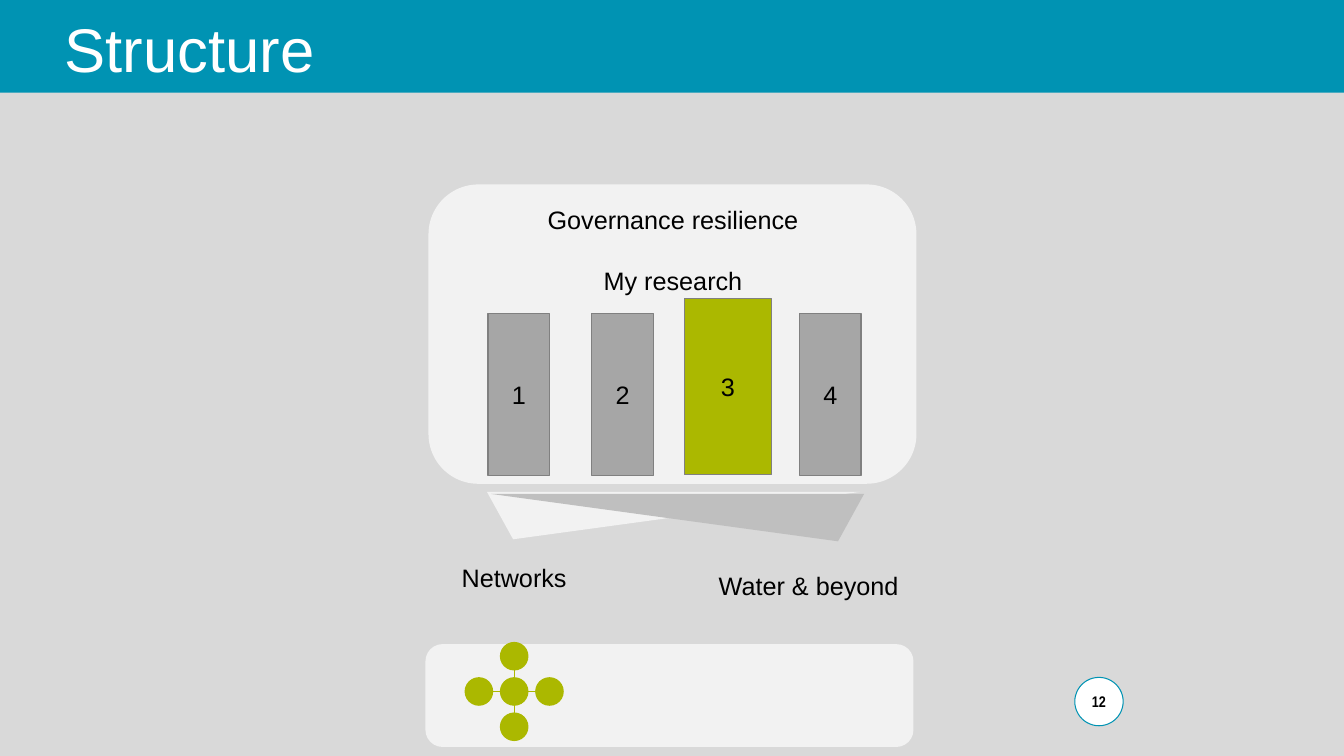
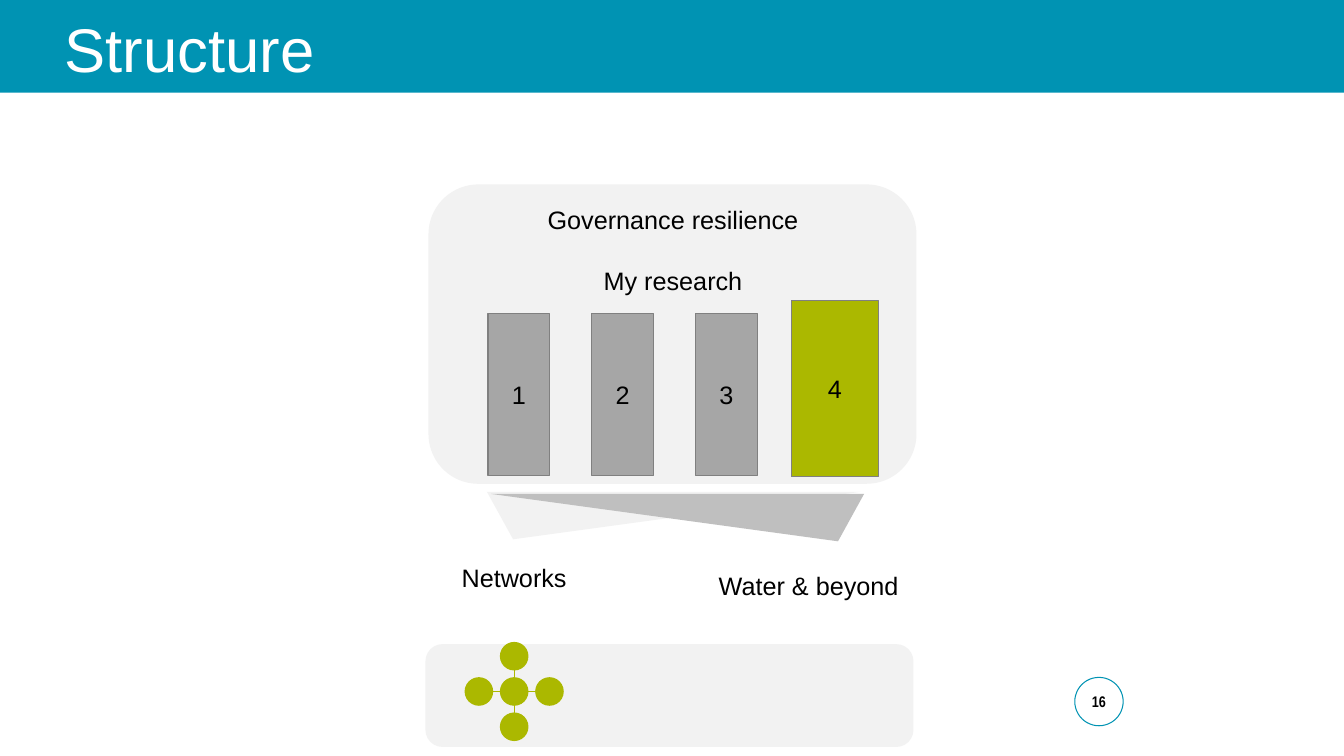
from dataclasses import dataclass

import pptx
import pptx.dml.color
import pptx.enum.shapes
import pptx.enum.text
import pptx.oxml
import pptx.oxml.ns
import pptx.shapes.autoshape
import pptx.shapes.connector
import pptx.slide
import pptx.util
from pptx.dml.color import RGBColor
from pptx.enum.shapes import MSO_CONNECTOR, MSO_SHAPE
from pptx.enum.text import MSO_ANCHOR, MSO_AUTO_SIZE, PP_ALIGN
from pptx.util import Inches, Pt

TEAL = RGBColor(0x00, 0x93, 0xB3)
LIME = RGBColor(0xAB, 0xB8, 0x00)
WHITE = RGBColor(0xFF, 0xFF, 0xFF)
BLACK = RGBColor(0x00, 0x00, 0x00)
PANEL_GREY = RGBColor(0xF2, 0xF2, 0xF2)
BACKDROP_GREY = RGBColor(0xD9, 0xD9, 0xD9)
BEAM_GREY = RGBColor(0xBF, 0xBF, 0xBF)
PILLAR_GREY = RGBColor(0xA6, 0xA6, 0xA6)
OUTLINE_GREY = RGBColor(0x80, 0x80, 0x80)

PILLAR_COUNT = 4
PILLAR_LEFT, PILLAR_TOP, PILLAR_PITCH = 4.84, 3.11, 1.03
PILLAR_SIZE = (0.61, 1.61)
ACTIVE_SIZE = (0.86, 1.75)
HUB = (5.1, 6.86)
NODE_SIZE, SPOKE = 0.27, 0.35


@dataclass(frozen=True)
class Box:
    left: float
    top: float
    width: float
    height: float

    def lengths(self) -> tuple[int, int, int, int]:
        return tuple(Inches(side) for side in (self.left, self.top, self.width, self.height))


@dataclass(frozen=True)
class Step:
    """One structure slide: the pillar in focus stands larger, in lime."""
    number: int
    background: RGBColor
    active: int
    active_left: float
    active_top: float


STEPS = [
    Step(12, BACKDROP_GREY, 3, 6.79, 2.96),
    Step(16, WHITE, 4, 7.85, 2.98),
]


def add_figure(
    slide: pptx.slide.Slide,
    kind: MSO_SHAPE,
    box: Box,
    fill: RGBColor,
    outline: RGBColor | None = None,
    outline_width: float = 0.75,
) -> pptx.shapes.autoshape.Shape:
    figure = slide.shapes.add_shape(kind, *box.lengths())
    figure.shadow.inherit = False
    figure.fill.solid()
    figure.fill.fore_color.rgb = fill
    if outline is None:
        figure.line.fill.background()
    else:
        figure.line.color.rgb = outline
        figure.line.width = Pt(outline_width)
    return figure


def write(
    frame: pptx.text.text.TextFrame,
    lines: list[str],
    size: float = 18,
    align: PP_ALIGN = PP_ALIGN.CENTER,
    font_name: str = "Arial",
    color: RGBColor = BLACK,
    bold: bool = False,
    gap: float = 0,
) -> None:
    """Fill the frame, with gap points between its paragraphs."""
    frame.word_wrap = True
    frame.text = "\n".join(lines)
    for index, paragraph in enumerate(frame.paragraphs):
        paragraph.alignment = align
        paragraph.space_before = Pt(gap if index else 0)
        paragraph.font.size = Pt(size)
        paragraph.font.name = font_name
        paragraph.font.color.rgb = color
        paragraph.font.bold = bold


def add_label(slide: pptx.slide.Slide, box: Box, lines: list[str],
              align: PP_ALIGN = PP_ALIGN.LEFT, gap: float = 0) -> None:
    label = slide.shapes.add_textbox(*box.lengths())
    write(label.text_frame, lines, align=align, gap=gap)


def add_pillars(slide: pptx.slide.Slide, step: Step) -> None:
    for number in range(1, PILLAR_COUNT + 1):
        if number == step.active:
            box, fill = Box(step.active_left, step.active_top, *ACTIVE_SIZE), LIME
        else:
            left = PILLAR_LEFT + (number - 1) * PILLAR_PITCH
            box, fill = Box(left, PILLAR_TOP, *PILLAR_SIZE), PILLAR_GREY
        pillar = add_figure(slide, MSO_SHAPE.RECTANGLE, box, fill, OUTLINE_GREY)
        pillar.text_frame.vertical_anchor = MSO_ANCHOR.MIDDLE
        write(pillar.text_frame, [str(number)])


def add_spoke(slide: pptx.slide.Slide, x: float, y: float) -> None:
    spoke = slide.shapes.add_connector(
        MSO_CONNECTOR.STRAIGHT, *(Inches(value) for value in (*HUB, x, y)))
    spoke.line.color.rgb = LIME
    spoke.line.width = Pt(1)
    properties = spoke.element.find(pptx.oxml.ns.qn("p:spPr"))
    properties.append(pptx.oxml.parse_xml(
        f"<a:effectLst {pptx.oxml.ns.nsdecls('a')}/>"))


def add_network(slide: pptx.slide.Slide) -> None:
    """Draw a hub with four satellites."""
    hub_x, hub_y = HUB
    satellites = [(hub_x + dx * SPOKE, hub_y + dy * SPOKE)
                  for dx, dy in ((0, -1), (1, 0), (0, 1), (-1, 0))]
    for x, y in satellites:
        add_spoke(slide, x, y)
    for x, y in [HUB, *satellites]:
        box = Box(x - NODE_SIZE / 2, y - NODE_SIZE / 2, NODE_SIZE, NODE_SIZE)
        add_figure(slide, MSO_SHAPE.OVAL, box, LIME, LIME, 1)


def add_beam(slide: pptx.slide.Slide, box: Box, fill: RGBColor, apex: float) -> None:
    """Draw a triangle pointing down; apex is measured from its right end."""
    beam = add_figure(slide, MSO_SHAPE.ISOSCELES_TRIANGLE, box, fill)
    beam.adjustments[0] = apex
    beam.rotation = 180


def add_page_number(slide: pptx.slide.Slide, number: int) -> None:
    badge = add_figure(slide, MSO_SHAPE.OVAL, Box(10.66, 6.72, 0.48, 0.48), WHITE, TEAL)
    frame = badge.text_frame
    frame.margin_left = frame.margin_right = 0
    frame.vertical_anchor = MSO_ANCHOR.MIDDLE
    write(frame, [str(number)], size=11, font_name="Arial Narrow", bold=True)


def add_title(slide: pptx.slide.Slide) -> None:
    frame = slide.shapes.title.text_frame
    write(frame, ["Structure"], size=44, align=PP_ALIGN.LEFT, color=WHITE)
    frame.auto_size = MSO_AUTO_SIZE.NONE
    frame.vertical_anchor = MSO_ANCHOR.TOP


def set_up_layout(layout: pptx.slide.SlideLayout, slide: pptx.slide.Slide) -> None:
    """Place the title and move a band drawn on the slide behind it."""
    title = layout.placeholders[0]
    title.left, title.top, title.width, title.height = Box(0.54, 0.06, 9.4, 0.84).lengths()
    band = add_figure(slide, MSO_SHAPE.RECTANGLE, Box(0, 0, 13.33, 0.92), TEAL)
    title.element.addprevious(band.element)


def build_step(slide: pptx.slide.Slide, step: Step) -> None:
    slide.background.fill.solid()
    slide.background.fill.fore_color.rgb = step.background
    add_title(slide)
    for panel in (Box(4.22, 6.39, 4.84, 1.02), Box(4.25, 1.83, 4.84, 2.97)):
        add_figure(slide, MSO_SHAPE.ROUNDED_RECTANGLE, panel, PANEL_GREY)
    add_page_number(slide, step.number)
    add_pillars(slide, step)
    add_label(slide, Box(4.8, 1.98, 3.75, 1), ["Governance resilience", "My research"],
              align=PP_ALIGN.CENTER, gap=22)
    add_network(slide)
    add_label(slide, Box(7.03, 5.61, 3.75, 0.4), ["Water & beyond"])
    add_label(slide, Box(4.48, 5.53, 2.25, 0.4), ["Networks"])
    add_beam(slide, Box(4.83, 4.88, 3.7, 0.47), PANEL_GREY, 0.93)
    add_beam(slide, Box(4.87, 4.9, 3.7, 0.47), BEAM_GREY, 0.07)


def main() -> None:
    deck = pptx.Presentation()
    deck.slide_width, deck.slide_height = Inches(13.33), Inches(7.5)
    layout = deck.slide_layouts.get_by_name("Title Only")
    slides = [deck.slides.add_slide(layout) for _ in STEPS]
    set_up_layout(layout, slides[0])
    for slide, step in zip(slides, STEPS):
        build_step(slide, step)
    deck.save("out.pptx")


if __name__ == "__main__":
    main()
